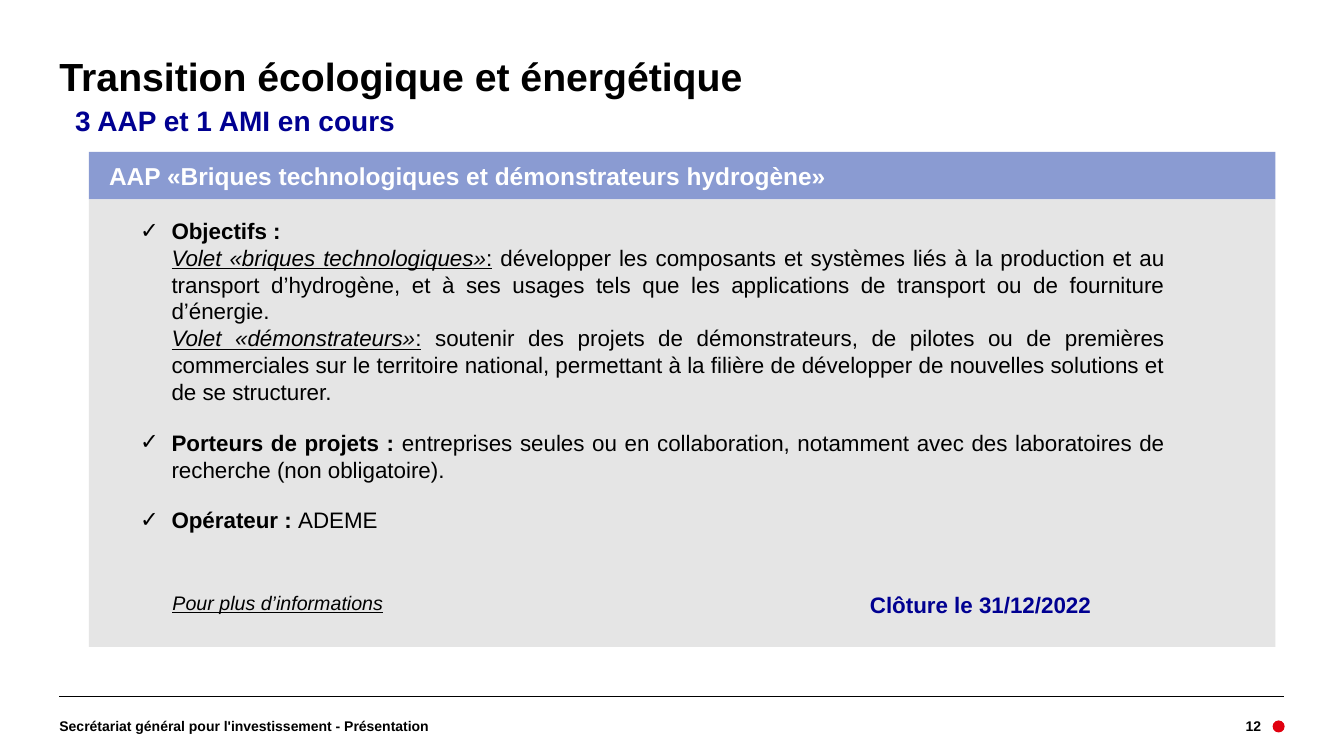
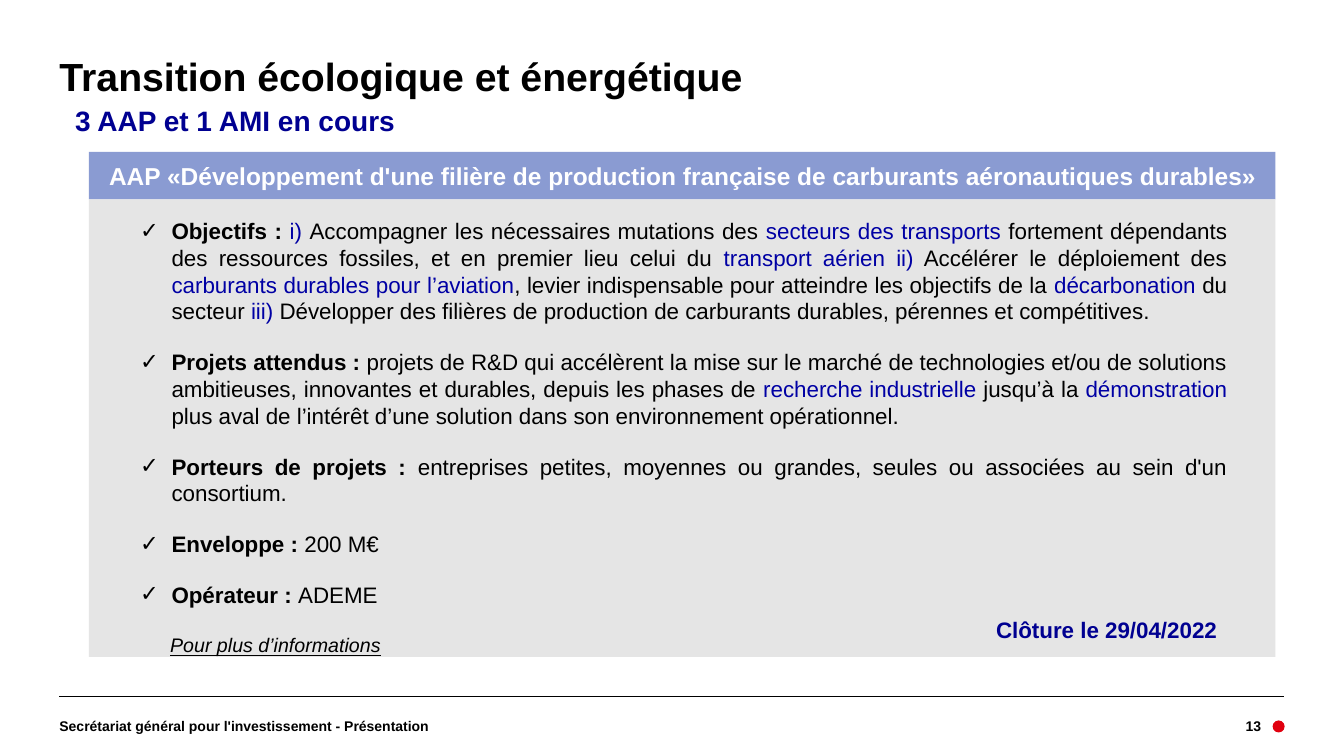
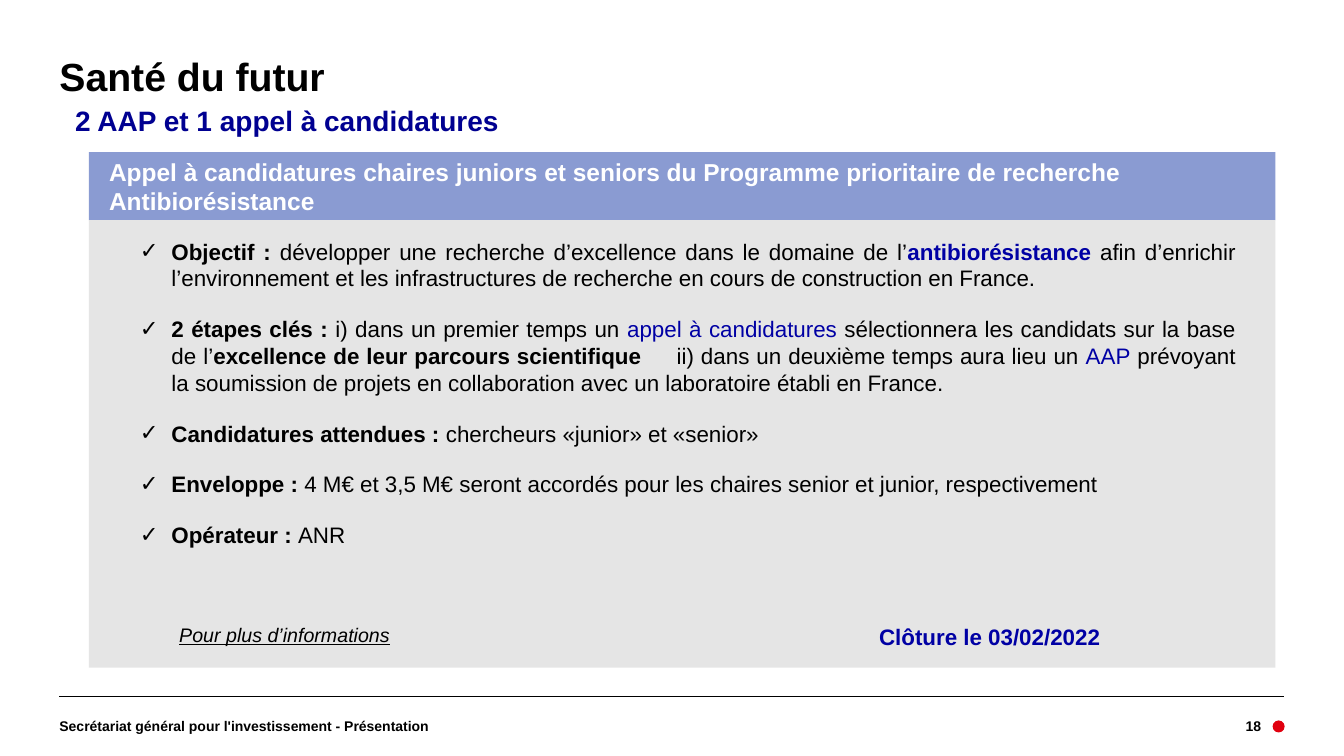
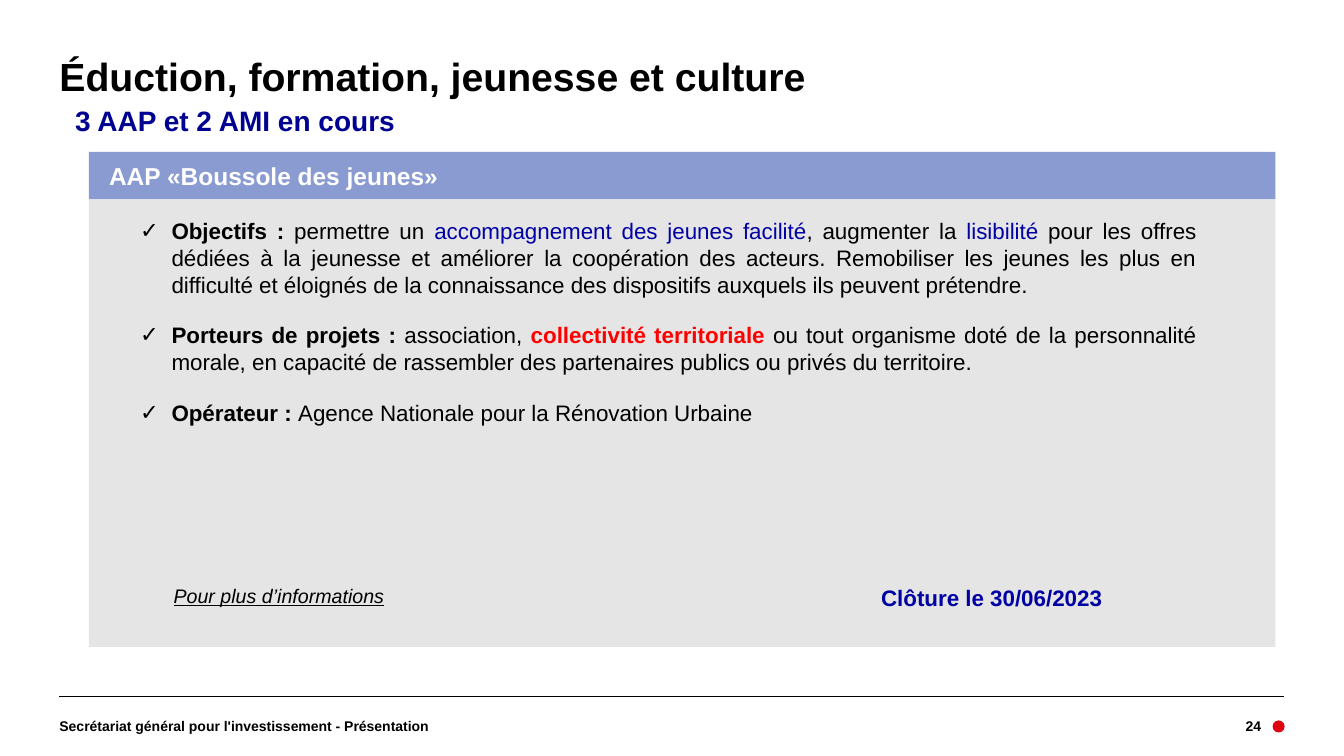
from lxml import etree
from pptx import Presentation
from pptx.dml.color import RGBColor
from pptx.enum.shapes import MSO_CONNECTOR, MSO_SHAPE
from pptx.enum.text import MSO_ANCHOR, PP_ALIGN
from pptx.oxml.ns import qn
from pptx.util import Pt

LEFT, RIGHT, JUSTIFY = PP_ALIGN.LEFT, PP_ALIGN.RIGHT, PP_ALIGN.JUSTIFY
TOP, MIDDLE = MSO_ANCHOR.TOP, MSO_ANCHOR.MIDDLE
RECTANGLE, OVAL = MSO_SHAPE.RECTANGLE, MSO_SHAPE.OVAL
STRAIGHT = MSO_CONNECTOR.STRAIGHT

BLACK = RGBColor(0x00, 0x00, 0x00)
WHITE = RGBColor(0xFF, 0xFF, 0xFF)
NAVY = RGBColor(0x00, 0x00, 0x91)
BLUE = RGBColor(0x00, 0x00, 0xA4)
RED = RGBColor(0xFF, 0x00, 0x00)
DOT_RED = RGBColor(0xE1, 0x00, 0x0F)
BAND_BLUE = RGBColor(0x8A, 0x9B, 0xD2)
PANEL_GREY = RGBColor(0xE5, 0xE5, 0xE5)

FONT = "Arial"
MARGIN, RIGHT_EDGE = 42.5, 917.4
BAND_LEFT, BAND_TOP, BAND_WIDTH = 63.5, 108.6, 847.5
BODY_LEFT, BODY_GAP, BODY_INDENT = 100, 12.6, 22.5

PLAIN = {}
BOLD = {"bold": True}
ACCENT = {"color": BLUE}
ACCENT_BOLD = {"color": BLUE, "bold": True}
ALERT = {"color": RED, "bold": True}
TERM = {"italic": True, "underline": True}
UNDERLINED = {"underline": True}
WIDE_SPACE = {"bold": True, "spacing": 20}

FOOTER = "Secrétariat général pour l'investissement - Présentation"
MORE = "Pour plus d’informations"

SLIDES = [
    {
        "number": 12,
        "title": "Transition écologique et énergétique",
        "subtitle": "3 AAP et 1 AMI en cours",
        "band": "AAP «Briques technologiques et démonstrateurs hydrogène»",
        "band_height": 33.8, "panel_height": 319.7, "body_width": 732,
        "closing": ("Clôture le 31/12/2022", 621.4, 422, NAVY),
        "more": (123.2, 422),
        "body": [
            ("✓", 0, [("Objectifs :", BOLD)]),
            ("", 0, [
                ("Volet «briques technologiques»", TERM), (":", UNDERLINED),
                (" développer les composants et systèmes liés à la production et au transport d’hydrogène, et à ses usages tels que les applications de transport ou de fourniture d’énergie.", PLAIN)]),
            ("", 17, [
                ("Volet «démonstrateurs»", TERM), (":", UNDERLINED),
                (" soutenir des projets de démonstrateurs, de pilotes ou de premières commerciales sur le territoire national, permettant à la filière de développer de nouvelles solutions et de se structurer.", PLAIN)]),
            ("✓", 17, [
                ("Porteurs de projets : ", BOLD),
                ("entreprises seules ou en collaboration, notamment avec des laboratoires de recherche (non obligatoire).", PLAIN)]),
            ("✓", 17, [("Opérateur : ", BOLD), ("ADEME", PLAIN)]),
        ],
    },
    {
        "number": 13,
        "title": "Transition écologique et énergétique",
        "subtitle": "3 AAP et 1 AMI en cours",
        "band": "AAP «Développement d'une filière de production française de carburants aéronautiques durables»",
        "band_height": 33.8, "panel_height": 326.9, "body_width": 776.5,
        "closing": ("Clôture le 29/04/2022", 711.5, 440, NAVY),
        "more": (121.5, 452.4),
        "body": [
            ("✓", 17, [
                ("Objectifs : ", BOLD), ("i) ", ACCENT),
                ("Accompagner les nécessaires mutations des ", PLAIN),
                ("secteurs des transports ", ACCENT),
                ("fortement dépendants des ressources fossiles, et en premier lieu celui du ", PLAIN),
                ("transport aérien ii)", ACCENT),
                (" Accélérer le déploiement des ", PLAIN),
                ("carburants durables pour l’aviation", ACCENT),
                (", levier indispensable pour atteindre les objectifs de la ", PLAIN),
                ("décarbonation", ACCENT), (" du secteur ", PLAIN), ("iii)", ACCENT),
                (" Développer des filières de production de carburants durables, pérennes et compétitives.", PLAIN)]),
            ("✓", 17, [
                ("Projets attendus : ", BOLD),
                ("projets de R&D qui accélèrent la mise sur le marché de technologies et/ou de solutions ambitieuses, innovantes et durables, depuis les phases de ", PLAIN),
                ("recherche industrielle ", ACCENT), ("jusqu’à la ", PLAIN),
                ("démonstration", ACCENT),
                (" plus aval de l’intérêt d’une solution dans son environnement opérationnel.", PLAIN)]),
            ("✓", 17, [
                ("Porteurs de projets : ", BOLD),
                ("entreprises petites, moyennes ou grandes, seules ou associées au sein d'un consortium.", PLAIN)]),
            ("✓", 17, [("Enveloppe : ", BOLD), ("200 M€", PLAIN)]),
            ("✓", 17, [("Opérateur : ", BOLD), ("ADEME", PLAIN)]),
        ],
    },
    {
        "number": 18,
        "title": "Santé du futur",
        "subtitle": "2 AAP et 1 appel à candidatures",
        "band": "Appel à candidatures chaires juniors et seniors du Programme prioritaire de recherche Antibiorésistance",
        "band_height": 48.6, "panel_height": 319.7, "body_width": 782.6,
        "closing": ("Clôture le 03/02/2022", 628, 445, BLUE),
        "more": (128, 445),
        "body": [
            ("✓", 17, [
                ("Objectif : ", BOLD),
                ("développer une recherche d’excellence dans le domaine de l’", PLAIN),
                ("antibiorésistance ", ACCENT_BOLD),
                ("afin d’enrichir l’environnement et les infrastructures de recherche en cours de construction en France.", PLAIN)]),
            ("✓", 17, [
                ("2 étapes clés : ", BOLD), ("i) dans un premier temps un ", PLAIN),
                ("appel à candidatures", ACCENT),
                (" sélectionnera les candidats sur la base de l’", PLAIN),
                ("excellence de leur parcours scientifique", BOLD), (" ", WIDE_SPACE),
                ("ii) dans un deuxième temps aura lieu un ", PLAIN), ("AAP", ACCENT),
                (" prévoyant la soumission de projets en collaboration avec un laboratoire établi en France.", PLAIN)]),
            ("✓", 17, [("Candidatures attendues : ", BOLD), ("chercheurs «junior» et «senior»", PLAIN)]),
            ("✓", 17, [
                ("Enveloppe : ", BOLD),
                ("4 M€ et 3,5 M€ seront accordés pour les chaires senior et junior, respectivement", PLAIN)]),
            ("✓", 17, [("Opérateur : ", BOLD), ("ANR", PLAIN)]),
        ],
    },
    {
        "number": 24,
        "title": "Éduction, formation, jeunesse et culture",
        "subtitle": "3 AAP et 2 AMI en cours",
        "band": "AAP «Boussole des jeunes»",
        "band_height": 33.8, "panel_height": 319.7, "body_width": 754.6,
        "closing": ("Clôture le 30/06/2023", 629.4, 417, BLUE),
        "more": (124, 417),
        "body": [
            ("✓", 17, [
                ("Objectifs : ", BOLD), ("permettre un ", PLAIN),
                ("accompagnement des jeunes facilité", ACCENT),
                (", augmenter la ", PLAIN), ("lisibilité", ACCENT),
                (" pour les offres dédiées à la jeunesse et améliorer la coopération des acteurs. Remobiliser les jeunes les plus en difficulté et éloignés de la connaissance des dispositifs auxquels ils peuvent prétendre.", PLAIN)]),
            ("✓", 17, [
                ("Porteurs de projets : ", BOLD), ("association, ", PLAIN),
                ("collectivité territoriale", ALERT),
                (" ou tout organisme doté de la personnalité morale, en capacité de rassembler des partenaires publics ou privés du territoire.", PLAIN)]),
            ("✓", 17, [("Opérateur : ", BOLD), ("Agence Nationale pour la Rénovation Urbaine", PLAIN)]),
        ],
    },
]


def add_run(paragraph, text, size, color=BLACK, bold=False, italic=False, underline=False, spacing=0):
    run = paragraph.add_run()
    run.text = text
    font = run.font
    font.name, font.size, font.color.rgb = FONT, Pt(size), color
    font.bold, font.italic, font.underline = bold, italic, underline
    if spacing:
        run._r.get_or_add_rPr().set("spc", str(round(spacing * 100)))


def prepare_frame(shape, anchor=TOP, inset=0):
    frame = shape.text_frame
    frame.word_wrap = True
    frame.vertical_anchor = anchor
    frame.margin_left = Pt(inset)
    frame.margin_top = frame.margin_right = frame.margin_bottom = 0
    return frame


def add_box(slide, left, top, width, height, anchor=TOP):
    box = slide.shapes.add_textbox(Pt(left), Pt(top), Pt(width), Pt(height))
    return prepare_frame(box, anchor)


def add_label(slide, area, text, size, align=LEFT, anchor=TOP, line_spacing=1.0, **style):
    paragraph = add_box(slide, *area, anchor).paragraphs[0]
    paragraph.alignment = align
    paragraph.line_spacing = line_spacing
    add_run(paragraph, text, size, **style)


def add_block(slide, kind, left, top, width, height, color):
    shape = slide.shapes.add_shape(kind, Pt(left), Pt(top), Pt(width), Pt(height))
    shape.shadow.inherit = False
    shape.fill.solid()
    shape.fill.fore_color.rgb = color
    shape.line.fill.background()
    return shape


def add_frame(slide, content):
    add_block(slide, OVAL, 909, 514.6, 8.6, 8.6, DOT_RED)
    rule = slide.shapes.add_connector(STRAIGHT, Pt(MARGIN), Pt(497.4), Pt(RIGHT_EDGE), Pt(497.4))
    rule.line.color.rgb = BLACK
    rule.line.width = Pt(0.8)
    etree.SubElement(rule._element.spPr, qn("a:effectLst"))
    add_label(slide, (MARGIN, 42.5, 747, 30), content["title"], 28, line_spacing=0.85, bold=True)
    add_label(slide, (53.6, 74.2, 526, 26), content["subtitle"], 20, color=NAVY, bold=True)
    add_label(slide, (MARGIN, 512.6, 510, 12), FOOTER, 10, anchor=MIDDLE, bold=True)
    add_label(slide, (850, 512.6, 50.8, 12), str(content["number"]), 10, RIGHT, MIDDLE, bold=True)


def set_bullet(paragraph, bullet):
    properties = paragraph._p.get_or_add_pPr()
    properties.set("marL", str(Pt(BODY_INDENT)))
    properties.set("indent", str(-Pt(BODY_INDENT) if bullet else 0))
    if bullet:
        etree.SubElement(properties, qn("a:buFont"), typeface=FONT)
        etree.SubElement(properties, qn("a:buChar"), char=bullet)
    else:
        etree.SubElement(properties, qn("a:buNone"))


def add_body(slide, content, top):
    frame = add_box(slide, BODY_LEFT, top, content["body_width"], content["panel_height"] - 2 * BODY_GAP)
    for index, (bullet, space_after, runs) in enumerate(content["body"]):
        paragraph = frame.add_paragraph() if index else frame.paragraphs[0]
        paragraph.alignment = JUSTIFY
        paragraph.space_after = Pt(space_after)
        set_bullet(paragraph, bullet)
        for text, style in runs:
            add_run(paragraph, text, 16, **style)


def add_call(slide, content):
    band = add_block(slide, RECTANGLE, BAND_LEFT, BAND_TOP, BAND_WIDTH, content["band_height"], BAND_BLUE)
    paragraph = prepare_frame(band, MIDDLE, 14.4).paragraphs[0]
    paragraph.alignment = LEFT
    add_run(paragraph, content["band"], 17.5, color=WHITE, bold=True)
    panel_top = BAND_TOP + content["band_height"]
    add_block(slide, RECTANGLE, BAND_LEFT, panel_top, BAND_WIDTH, content["panel_height"], PANEL_GREY)
    add_body(slide, content, panel_top + BODY_GAP)
    text, left, top, color = content["closing"]
    add_label(slide, (left, top, 180, 22), text, 16, color=color, bold=True)
    add_label(slide, (*content["more"], 220, 20), MORE, 14, italic=True, underline=True)


def main():
    presentation = Presentation()
    presentation.slide_width, presentation.slide_height = Pt(960), Pt(540)
    blank = presentation.slide_layouts[6]
    for content in SLIDES:
        slide = presentation.slides.add_slide(blank)
        add_frame(slide, content)
        add_call(slide, content)
    presentation.save("out.pptx")


if __name__ == "__main__":
    main()
